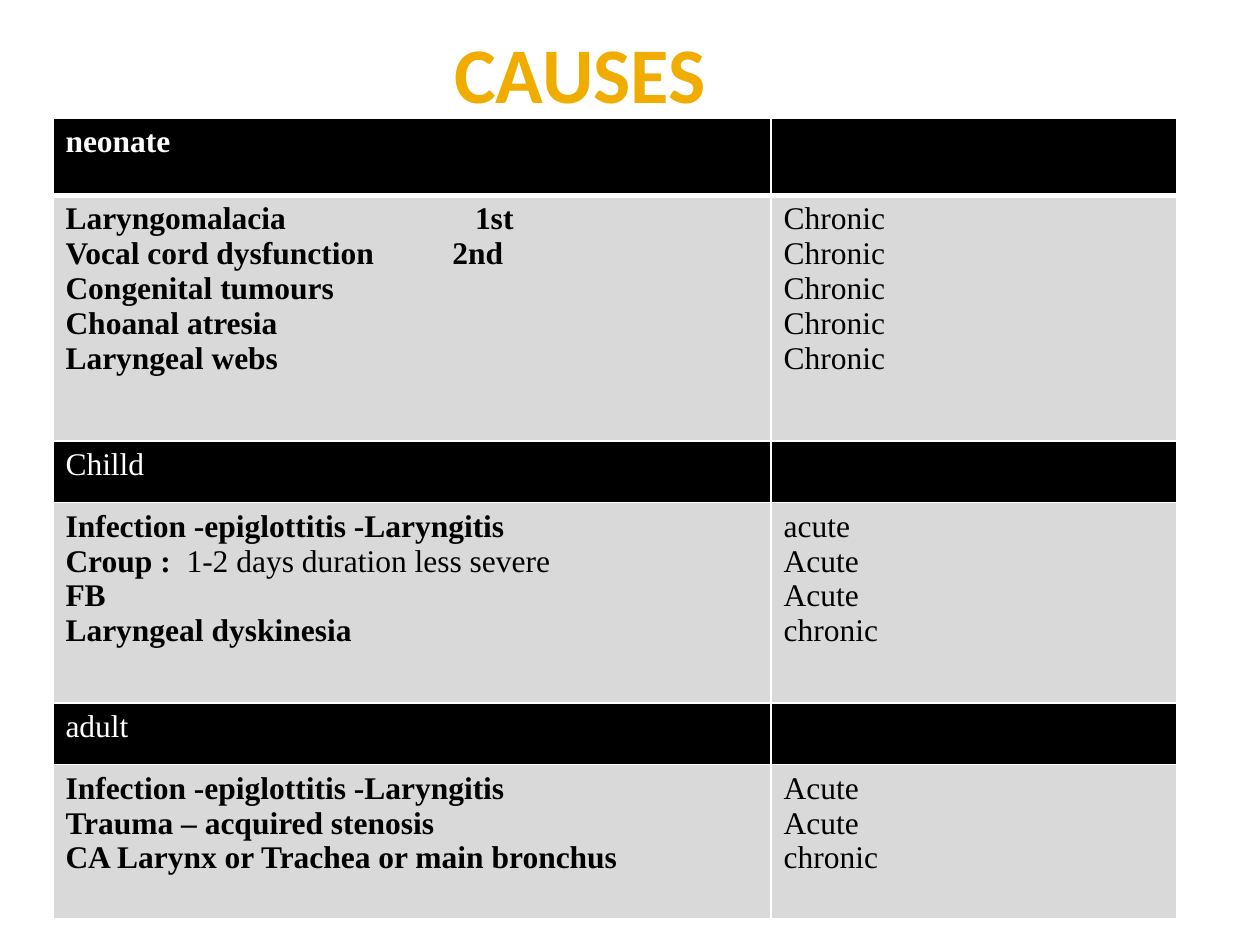
from lxml import etree
from pptx import Presentation
from pptx.dml.color import RGBColor
from pptx.enum.text import MSO_ANCHOR, PP_ALIGN
from pptx.oxml.ns import qn
from pptx.util import Inches, Pt

CENTER, LEFT = PP_ALIGN.CENTER, PP_ALIGN.LEFT
MIDDLE = MSO_ANCHOR.MIDDLE
BLANK_LAYOUT = 6
COLORS = {"title": "F0AD00", "heading": "000000", "body": "D9D9D9",
          "light": "FFFFFF", "dark": "000000", "border": "FFFFFF"}

TITLE_BOX = (0.33, -0.17, 8.5, 1.49)
TABLE_BOX = (0.42, 0.94, 8.92, 6.35)
COLUMN_WIDTHS = (5.7, 3.22)
HEADING_HEIGHT = 0.49
FIRST_HEADING_HEIGHT = 0.61

# Each group: heading, heading is bold, height of its list,
# and rows of (cause, plain remark, rank, rank position, course).
GROUPS = [
    ("neonate", True, 1.95, [
        ("Laryngomalacia", "", "1st", 3.25, "Chronic"),
        ("Vocal cord dysfunction", "", "2nd", 3.07, "Chronic"),
        ("Congenital tumours", "", "", 0, "Chronic"),
        ("Choanal atresia", "", "", 0, "Chronic"),
        ("Laryngeal webs", "", "", 0, "Chronic"),
    ]),
    ("Chilld", False, 1.59, [
        ("Infection -epiglottitis -Laryngitis", "", "", 0, "acute"),
        ("Croup :  ", "1-2 days duration less severe", "", 0, "Acute"),
        ("FB", "", "", 0, "Acute"),
        ("Laryngeal dyskinesia", "", "", 0, "chronic"),
    ]),
    ("adult", False, 1.22, [
        ("Infection -epiglottitis -Laryngitis", "", "", 0, "Acute"),
        ("Trauma – acquired stenosis", "", "", 0, "Acute"),
        ("CA Larynx or Trachea or main bronchus", "", "", 0, "chronic"),
    ]),
]


def add_text(paragraph, text, *, color="dark", bold=False, size=18,
             font="Times New Roman", align=LEFT):
    paragraph.alignment = align
    run = paragraph.add_run()
    run.text = text
    run.font.name = font
    run.font.size = Pt(size)
    run.font.bold = bold
    run.font.color.rgb = RGBColor.from_string(COLORS[color])


def add_tab_stop(paragraph, position):
    properties = paragraph._p.get_or_add_pPr()
    tabs = etree.SubElement(properties, qn("a:tabLst"))
    etree.SubElement(tabs, qn("a:tab"), pos=str(Inches(position)), algn="l")


def style_cell(cell, fill, top=1, bottom=1):
    """Fill a cell and draw its borders, with widths in points."""
    cell.fill.solid()
    cell.fill.fore_color.rgb = RGBColor.from_string(COLORS[fill])
    properties = cell._tc.get_or_add_tcPr()
    widths = {"lnL": 1, "lnR": 1, "lnT": top, "lnB": bottom}
    for index, (side, width) in enumerate(widths.items()):
        line = etree.Element(qn(f"a:{side}"), w=str(Pt(width)))
        solid = etree.SubElement(line, qn("a:solidFill"))
        etree.SubElement(solid, qn("a:srgbClr"), val=COLORS["border"])
        properties.insert(index, line)


def next_paragraph(text_frame, index):
    return text_frame.add_paragraph() if index else text_frame.paragraphs[0]


def add_title(slide, box, text):
    text_frame = slide.shapes.add_textbox(*map(Inches, box)).text_frame
    text_frame.word_wrap = True
    text_frame.vertical_anchor = MIDDLE
    text_frame.margin_left = Inches(0.1)
    text_frame.margin_right = Inches(0.05)
    add_text(text_frame.paragraphs[0], text, color="title", bold=True,
             size=45, font="Calibri", align=CENTER)


def fill_group(table, heading_row, group):
    """Fill a heading row and the list row below it."""
    heading, bold, list_height, causes = group
    is_first = heading_row == 0
    rule = 3 if is_first else 1
    list_row = heading_row + 1
    table.rows[heading_row].height = Inches(
        FIRST_HEADING_HEIGHT if is_first else HEADING_HEIGHT)
    table.rows[list_row].height = Inches(list_height)
    for column in range(len(COLUMN_WIDTHS)):
        style_cell(table.cell(heading_row, column), "heading", bottom=rule)
        style_cell(table.cell(list_row, column), "body", top=rule)

    heading_frame = table.cell(heading_row, 0).text_frame
    add_text(heading_frame.paragraphs[0], heading, color="light", bold=bold)
    cause_frame = table.cell(list_row, 0).text_frame
    course_frame = table.cell(list_row, 1).text_frame
    for index, (cause, remark, rank, position, course) in enumerate(causes):
        paragraph = next_paragraph(cause_frame, index)
        if rank:
            add_tab_stop(paragraph, position)
            cause += "\t" + rank
        add_text(paragraph, cause, bold=True)
        if remark:
            add_text(paragraph, remark)
        add_text(next_paragraph(course_frame, index), course)


def add_causes_table(slide, box, groups):
    frame = slide.shapes.add_table(2 * len(groups), len(COLUMN_WIDTHS),
                                   *map(Inches, box))
    table = frame.table
    table.first_row = False
    table.horz_banding = False
    for column, width in zip(table.columns, COLUMN_WIDTHS):
        column.width = Inches(width)
    for index, group in enumerate(groups):
        fill_group(table, 2 * index, group)


def main():
    presentation = Presentation()
    presentation.slide_width = Inches(10)
    presentation.slide_height = Inches(7.5)
    layout = presentation.slide_layouts[BLANK_LAYOUT]
    slide = presentation.slides.add_slide(layout)
    add_title(slide, TITLE_BOX, "CAUSES")
    add_causes_table(slide, TABLE_BOX, GROUPS)
    presentation.save("out.pptx")


if __name__ == "__main__":
    main()
